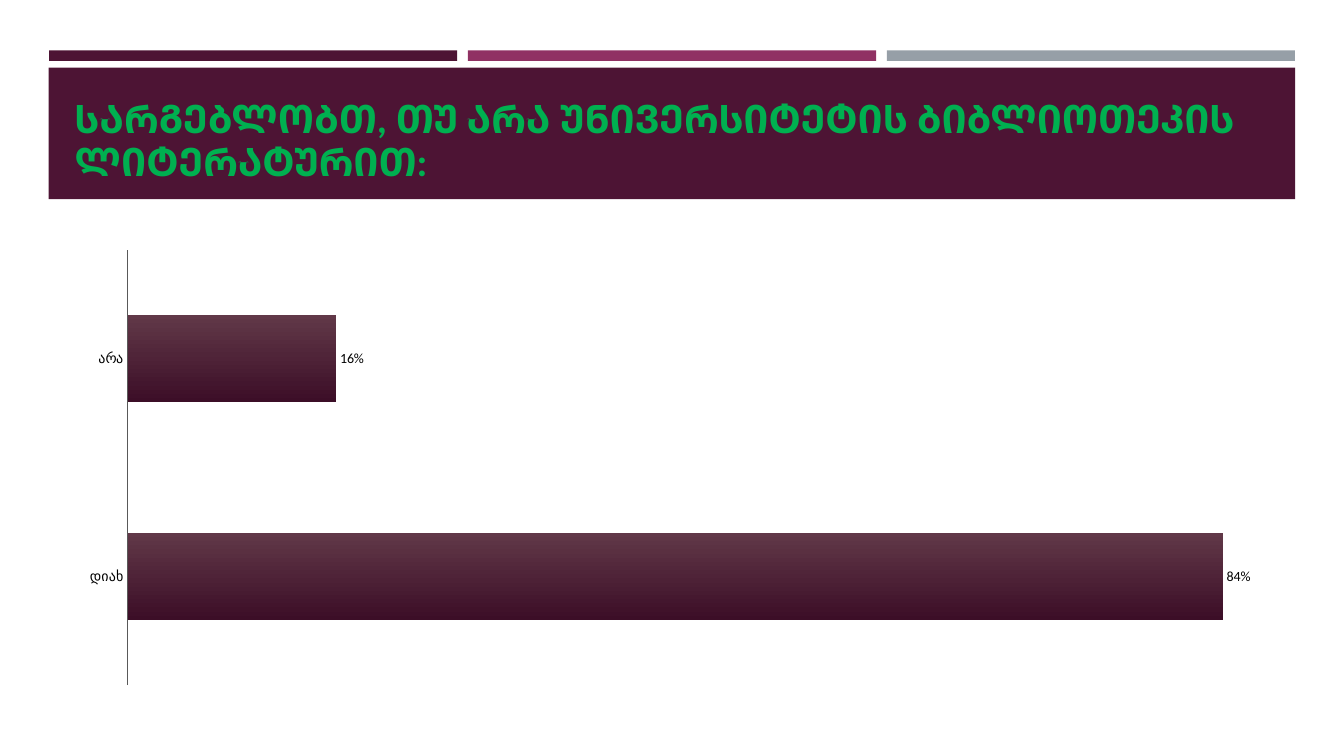
"""Build the library survey slide with a title band and a bar chart."""
import pptx
import pptx.chart.data
import pptx.dml.color
import pptx.enum.chart
import pptx.enum.shapes
import pptx.enum.text
import pptx.oxml
import pptx.util

Pt = pptx.util.Pt
FONT = "Calibri"
HUES = {"plum": "4D1434", "rose": "903163", "grey": "969FA7", "green": "00B050",
        "top": "613848", "base": "3C0E27", "axis": "595959", "ink": "000000"}


def hue(name):
    return pptx.dml.color.RGBColor.from_string(HUES[name])


def write(frame, text, size, color, bold=False, space=1.0):
    frame.text = text
    para = frame.paragraphs[0]
    para.alignment = pptx.enum.text.PP_ALIGN.LEFT
    para.line_spacing = space
    font = para.runs[0].font
    font.name, font.size, font.bold = FONT, Pt(size), bold
    font.color.rgb = hue(color)


deck = pptx.Presentation()
deck.slide_width, deck.slide_height = Pt(960), Pt(540)
slide = deck.slides.add_slide(deck.slide_layouts[5])

bars = [(35 + 299.2 * i, 36, 291.6, 7.5, name)
        for i, name in enumerate(["plum", "rose", "grey"])]
for left, top, width, height, name in bars + [(34.8, 48.4, 890.4, 93.8, "plum")]:
    rect = slide.shapes.add_shape(pptx.enum.shapes.MSO_SHAPE.RECTANGLE,
                                  Pt(left), Pt(top), Pt(width), Pt(height))
    rect.shadow.inherit = False
    rect.fill.solid()
    rect.fill.fore_color.rgb = hue(name)
    rect.line.fill.background()

title = slide.shapes.title
title.element.getparent().append(title.element)
title.left, title.top, title.width, title.height = Pt(46), Pt(55.4), Pt(868.4), Pt(80)
frame = title.text_frame
write(frame, "ᲡᲐᲠᲒᲔᲑᲚᲝᲑᲗ, ᲗᲣ ᲐᲠᲐ ᲣᲜᲘᲕᲔᲠᲡᲘᲢᲔᲢᲘᲡ ᲑᲘᲑᲚᲘᲝᲗᲔᲙᲘᲡ ᲚᲘᲢᲔᲠᲐᲢᲣᲠᲘᲗ:",
      size=28, color="green", bold=True, space=0.9)
frame.word_wrap = True
frame.auto_size = pptx.enum.text.MSO_AUTO_SIZE.NONE
frame.vertical_anchor = pptx.enum.text.MSO_ANCHOR.BOTTOM

data = pptx.chart.data.CategoryChartData(number_format="0%")
data.categories = ["დიახ", "არა"]
data.add_series("Series 1", [0.84, 0.16])
chart = slide.shapes.add_chart(pptx.enum.chart.XL_CHART_TYPE.BAR_CLUSTERED,
                               Pt(46), Pt(172), Pt(901.4), Pt(324), data).chart
chart.has_legend = chart.has_title = False
chart.font.name, chart.font.size = FONT, Pt(10)
chart.font.color.rgb = hue("ink")

cats = chart.category_axis
cats.major_tick_mark = cats.minor_tick_mark = pptx.enum.chart.XL_TICK_MARK.NONE
cats.format.line.color.rgb = hue("axis")
cats.format.line.width = Pt(0.75)
cats.has_major_gridlines = False
vals = chart.value_axis
vals.visible = vals.has_major_gridlines = False
vals.minimum_scale, vals.maximum_scale = 0, 0.9

plot = chart.plots[0]
plot.gap_width, plot.overlap = 150, -25
plot.vary_by_categories = False
series = plot.series[0]
fill = series.format.fill
fill.gradient()
fill.gradient_angle = 270
for stop, name in zip(fill.gradient_stops, ["top", "base"]):
    stop.color.rgb = hue(name)
series.format.line.fill.background()
labels = series.data_labels
labels.show_value = True
labels.number_format, labels.number_format_is_linked = "0%", False
labels.position = pptx.enum.chart.XL_LABEL_POSITION.OUTSIDE_END

area = chart.element.xpath("c:chart/c:plotArea")[0]
for old in area.xpath("c:layout"):
    area.remove(old)
box = "".join(f'<c:{key} val="{val}"/>' for key, val in
              [("layoutTarget", "inner"), ("xMode", "edge"), ("yMode", "edge"),
               ("x", 0.05), ("y", 0.02), ("w", 0.93), ("h", 0.96)])
space = "http://schemas.openxmlformats.org/drawingml/2006/chart"
area.insert(0, pptx.oxml.parse_xml(
    f'<c:layout xmlns:c="{space}"><c:manualLayout>{box}</c:manualLayout></c:layout>'))

deck.save("out.pptx")
